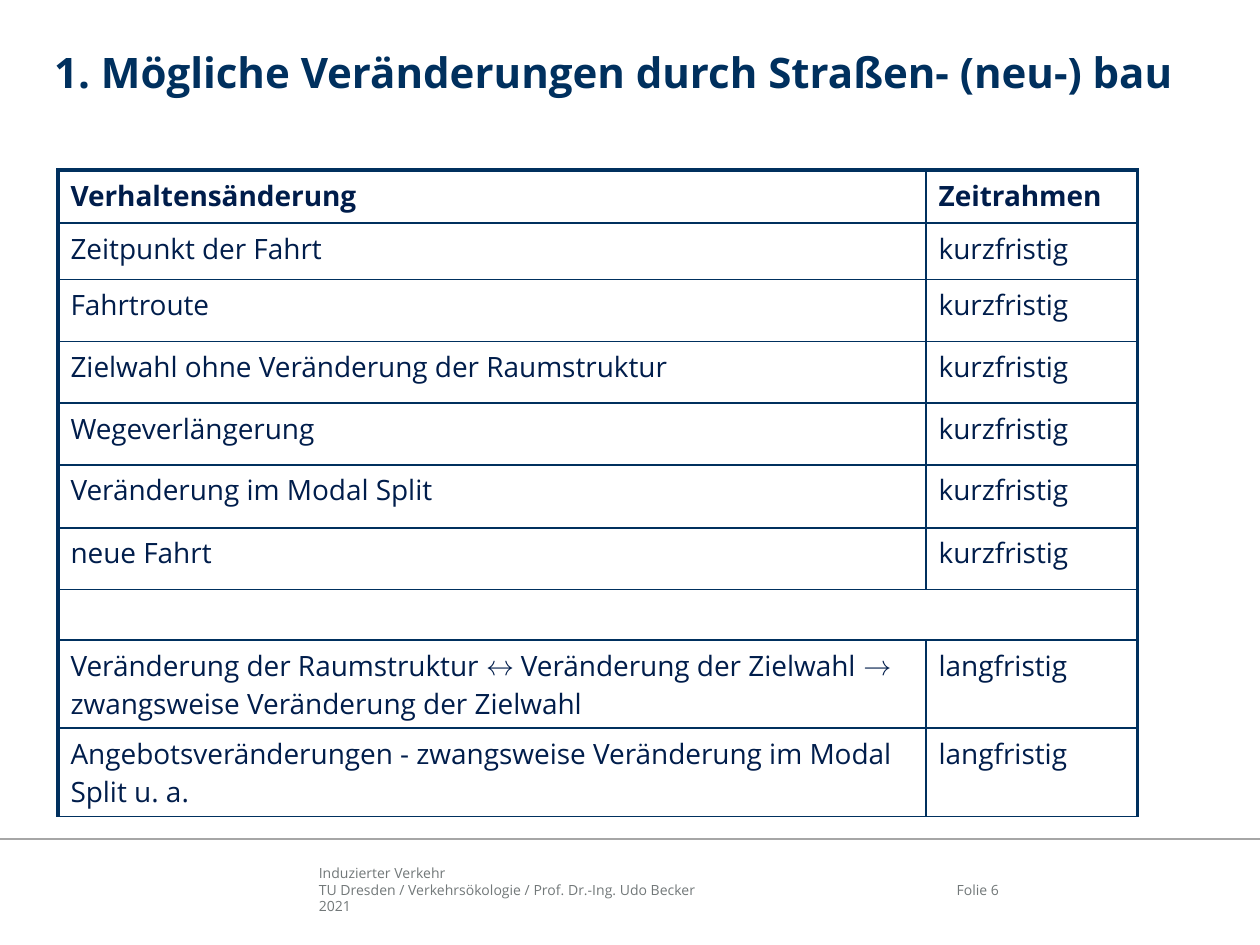
from dataclasses import dataclass

from lxml.etree import SubElement
from pptx import Presentation
from pptx.dml.color import RGBColor
from pptx.enum.shapes import MSO_CONNECTOR
from pptx.enum.text import MSO_ANCHOR, PP_ALIGN
from pptx.oxml.ns import qn
from pptx.util import Inches, Pt


@dataclass(frozen=True)
class Theme:
    font: str = "Open Sans"
    navy: str = "00305E"
    ink: str = "001D4B"
    grey: str = "727879"
    rule: str = "A6A6A6"
    title_size: float = 24
    table_size: float = 16
    footer_size: float = 8
    thick: float = 2.25
    thin: float = 1


class SlideBuilder:
    def __init__(self, slide, theme):
        self.slide = slide
        self.theme = theme

    def format_text(self, text_frame, size, color, bold=False, align=PP_ALIGN.LEFT):
        for paragraph in text_frame.paragraphs:
            paragraph.alignment = align
            for run in paragraph.runs:
                run.font.name = self.theme.font
                run.font.size = Pt(size)
                run.font.bold = bold
                run.font.color.rgb = RGBColor.from_string(color)

    def text(self, box, content, size, color, bold=False,
             align=PP_ALIGN.LEFT, anchor=MSO_ANCHOR.TOP):
        shape = self.slide.shapes.add_textbox(*map(Inches, box))
        frame = shape.text_frame
        frame.margin_left = frame.margin_right = 0
        frame.margin_top = frame.margin_bottom = 0
        frame.word_wrap = True
        frame.vertical_anchor = anchor
        frame.text = content
        self.format_text(frame, size, color, bold, align)

    def rule(self, left, right, top):
        connector = self.slide.shapes.add_connector(
            MSO_CONNECTOR.STRAIGHT, Inches(left), Inches(top), Inches(right), Inches(top))
        connector.line.color.rgb = RGBColor.from_string(self.theme.rule)
        connector.line.width = Pt(1)
        SubElement(connector._element.spPr, qn("a:effectLst"))

    def borders(self, cell, widths):
        properties = cell._tc.get_or_add_tcPr()
        for index, (side, width) in enumerate(zip("LRTB", widths)):
            line = SubElement(properties, qn(f"a:ln{side}"), w=str(Pt(width)))
            fill = SubElement(line, qn("a:solidFill"))
            SubElement(fill, qn("a:srgbClr"), val=self.theme.navy)
            properties.insert(index, line)

    def table(self, left, top, column_widths, row_heights, rows):
        theme = self.theme
        frame = self.slide.shapes.add_table(
            len(rows), len(column_widths), Inches(left), Inches(top),
            Inches(sum(column_widths)), Inches(sum(row_heights)))
        table = frame.table
        table.first_row = table.horz_banding = False
        for column, width in zip(table.columns, column_widths):
            column.width = Inches(width)
        last = len(column_widths) - 1
        for row_index, (values, height) in enumerate(zip(rows, row_heights)):
            table.rows[row_index].height = Inches(height)
            merged = len(values) == 1
            if merged:
                table.cell(row_index, 0).merge(table.cell(row_index, last))
            for column_index, value in enumerate(values):
                cell = table.cell(row_index, column_index)
                cell.fill.background()
                if value:
                    cell.text_frame.text = value
                    self.format_text(cell.text_frame, theme.table_size, theme.ink,
                                     bold=row_index == 0)
                else:
                    cell.text_frame.paragraphs[0].font.size = Pt(theme.footer_size)
                at_right = merged or column_index == last
                outer = (column_index == 0, at_right, row_index == 0, False)
                self.borders(cell, [theme.thick if edge else theme.thin for edge in outer])
            if merged:
                spanned = table.cell(row_index, last)
                spanned.fill.background()
                self.borders(spanned, [theme.thin, theme.thick, theme.thin, theme.thin])


def main():
    presentation = Presentation()
    presentation.slide_width = Inches(10)
    presentation.slide_height = Inches(7.5)
    slide = presentation.slides.add_slide(presentation.slide_layouts[6])
    theme = Theme()
    builder = SlideBuilder(slide, theme)

    builder.text((2.53, 6.86, 4.52, 0.4),
                 "Induzierter Verkehr\n"
                 "TU Dresden / Verkehrsökologie / Prof. Dr.-Ing. Udo Becker\n"
                 "2021",
                 theme.footer_size, theme.grey)
    builder.rule(0, 10, 6.66)
    builder.text((7.17, 6.86, 0.76, 0.4), "Folie 6", theme.footer_size, theme.grey,
                 align=PP_ALIGN.RIGHT, anchor=MSO_ANCHOR.MIDDLE)
    builder.text((0.43, 0.37, 9.15, 0.89),
                 "1. Mögliche Veränderungen durch Straßen- (neu-) bau",
                 theme.title_size, theme.navy, bold=True)

    short_term = [
        "Zeitpunkt der Fahrt",
        "Fahrtroute",
        "Zielwahl ohne Veränderung der Raumstruktur",
        "Wegeverlängerung",
        "Veränderung im Modal Split",
        "neue Fahrt",
    ]
    long_term = [
        "Veränderung der Raumstruktur ↔ Veränderung der Zielwahl → "
        "zwangsweise Veränderung der Zielwahl",
        "Angebotsveränderungen - zwangsweise Veränderung im Modal Split u. a.",
    ]
    rows = [
        ("Verhaltensänderung", "Zeitrahmen"),
        *((change, "kurzfristig") for change in short_term),
        ("",),
        *((change, "langfristig") for change in long_term),
    ]
    row_heights = [0.42, 0.45, 0.49, 0.49, 0.49, 0.5, 0.49, 0.4, 0.7, 0.7]
    builder.table(0.46, 1.35, [6.89, 1.68], row_heights, rows)

    presentation.save("out.pptx")


if __name__ == "__main__":
    main()
